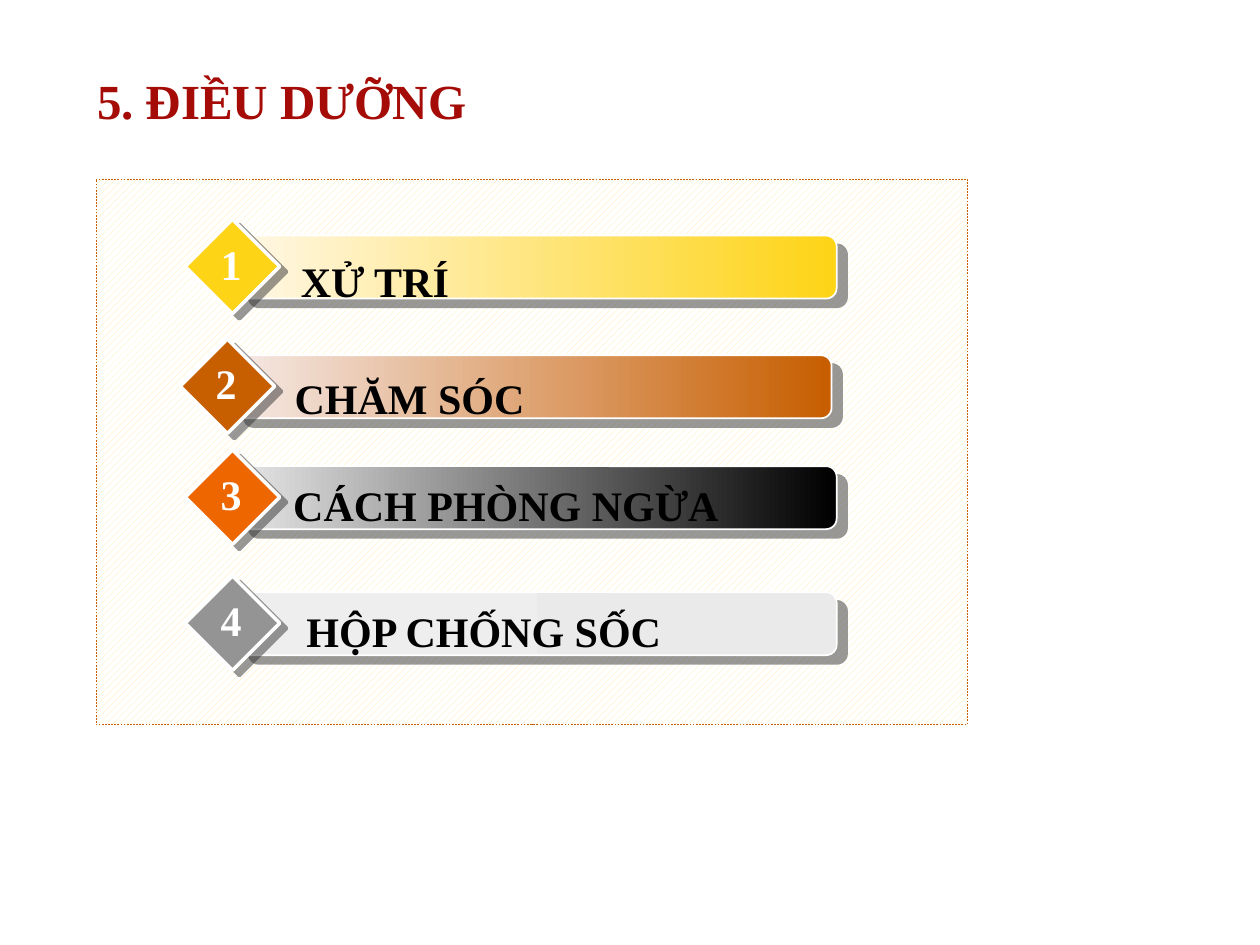
from lxml.etree import SubElement
from pptx import Presentation
from pptx.dml.color import RGBColor
from pptx.enum.dml import MSO_LINE, MSO_PATTERN
from pptx.enum.shapes import MSO_SHAPE
from pptx.enum.text import MSO_ANCHOR, MSO_AUTO_SIZE, PP_ALIGN
from pptx.oxml.ns import qn
from pptx.util import Inches, Pt

WIDE, HIGH = Inches(10), Inches(7.5)
COL, ROW = WIDE / 100, HIGH / 75  # grid of 100 columns by 75 rows

WHITE = RGBColor(0xFF, 0xFF, 0xFF)
BLACK = RGBColor(0, 0, 0)
RED = RGBColor(0xA5, 0x0C, 0x07)
CREAM = RGBColor(0xFF, 0xEE, 0xA2)
GOLD = RGBColor(0xFE, 0xD4, 0x16)
RUST = RGBColor(0xC7, 0x5E, 0x00)
ORANGE = RGBColor(0xEE, 0x66, 0x00)
GREY = RGBColor(0x94, 0x94, 0x94)
PALE_GOLD = RGBColor(0xFF, 0xF7, 0xE6)
PALE_RUST = RGBColor(0xF5, 0xE9, 0xE6)
SILVER = RGBColor(0xE6, 0xE6, 0xE6)
MIST = RGBColor(0xEE, 0xEE, 0xEE)
FOG = RGBColor(0xEA, 0xEA, 0xEA)

FONT = {"name": "Times New Roman", "size": Pt(24), "bold": True}

# Left and top of the row, label, label box (dx, dy, width),
# diamond colour, bar colours
ITEMS = [
    (14.7, 17.4, "XỬ TRÍ", (-3.7, 2.4, 37.5), GOLD, (PALE_GOLD, GOLD)),
    (14.3, 26.9, "CHĂM SÓC", (1.4, 2.2, 33.6), RUST, (PALE_RUST, RUST)),
    (14.7, 35.7, "CÁCH PHÒNG NGỪA", (6.7, 1.9, 37.5), ORANGE, (SILVER, BLACK)),
    (14.7, 45.7, "HỘP CHỐNG SỐC", (3.2, 1.9, 41), GREY, (MIST, FOG)),
]


def place(x, y, w, h):
    """Turn columns and rows into lengths."""
    return [round(n) for n in (x * COL, y * ROW, w * COL, h * ROW)]


def write(shape, text, color, align, wrap, **more):
    frame = shape.text_frame
    look = {"word_wrap": wrap, "auto_size": MSO_AUTO_SIZE.SHAPE_TO_FIT_TEXT,
            "vertical_anchor": MSO_ANCHOR.TOP}
    for key, value in look.items():
        setattr(frame, key, value)
    para = frame.paragraphs[0]
    para.alignment = align
    run = para.add_run()
    run.text = text
    for key, value in {**FONT, **more}.items():
        setattr(run.font, key, value)
    run.font.color.rgb = color


def shade(shape, dist, angle):
    """Give a hard, half clear shadow; angle is in degrees."""
    shape.shadow.inherit = False
    effects = shape.fill._xPr.find(qn("a:effectLst"))
    outer = SubElement(effects, qn("a:outerShdw"), blurRad="0",
                       dist=str(Pt(dist)), dir=str(angle * 60000),
                       algn="ctr", rotWithShape="0")
    tone = SubElement(outer, qn("a:srgbClr"), val="333333")
    SubElement(tone, qn("a:alpha"), val="50000")


def edge(shape, color, width):
    shape.line.color.rgb = color
    shape.line.width = Pt(width)


def add_title(slide, box):
    title = slide.shapes.title
    title.left, title.top, title.width, title.height = place(*box)
    write(title, "5. ĐIỀU DƯỠNG", RED, PP_ALIGN.LEFT, False, size=Pt(28))


def add_panel(slide, box):
    panel = slide.shapes.add_shape(MSO_SHAPE.RECTANGLE, *place(*box))
    panel.shadow.inherit = False
    panel.fill.patterned()
    panel.fill.pattern = MSO_PATTERN.WIDE_UPWARD_DIAGONAL
    panel.fill.fore_color.rgb = CREAM
    panel.fill.back_color.rgb = WHITE
    edge(panel, RUST, 0.25)
    panel.line.dash_style = MSO_LINE.DASH


def add_item(slide, num, x, y, label, box, color, blend):
    parts = slide.shapes.add_group_shape().shapes

    # Bar
    bar = parts.add_shape(MSO_SHAPE.ROUNDED_RECTANGLE,
                          *place(x + 4.2, y + 1.3, 47.5, 5))
    bar.fill.gradient()
    bar.fill.gradient_angle = 0
    for stop, tone, spot in zip(bar.fill.gradient_stops, blend, (0, 1)):
        stop.color.rgb = tone
        stop.position = spot
    edge(bar, WHITE, 1)
    shade(bar, 7.8, 40)

    # Diamond
    gem = parts.add_shape(MSO_SHAPE.DIAMOND, *place(x, y, 7.5, 7.5))
    gem.fill.solid()
    gem.fill.fore_color.rgb = color
    edge(gem, WHITE, 2)
    shade(gem, 5, 37)

    # Label and number
    dx, dy, w = box
    name = parts.add_textbox(*place(x + dx, y + dy, w, 5.1))
    write(name, label, BLACK, PP_ALIGN.CENTER, True)
    mark = parts.add_textbox(*place(x + 1.8, y + 1, 3.7, 5.1))
    write(mark, str(num), WHITE, PP_ALIGN.CENTER, False)


def main():
    deck = Presentation()
    deck.slide_width, deck.slide_height = WIDE, HIGH
    slide = deck.slides.add_slide(deck.slide_layouts[5])
    add_title(slide, (6.7, 5.1, 31.6, 5.7))
    add_panel(slide, (7.6, 14.2, 69.2, 43.3))
    for num, item in enumerate(ITEMS, 1):
        add_item(slide, num, *item)
    deck.save("out.pptx")


if __name__ == "__main__":
    main()
